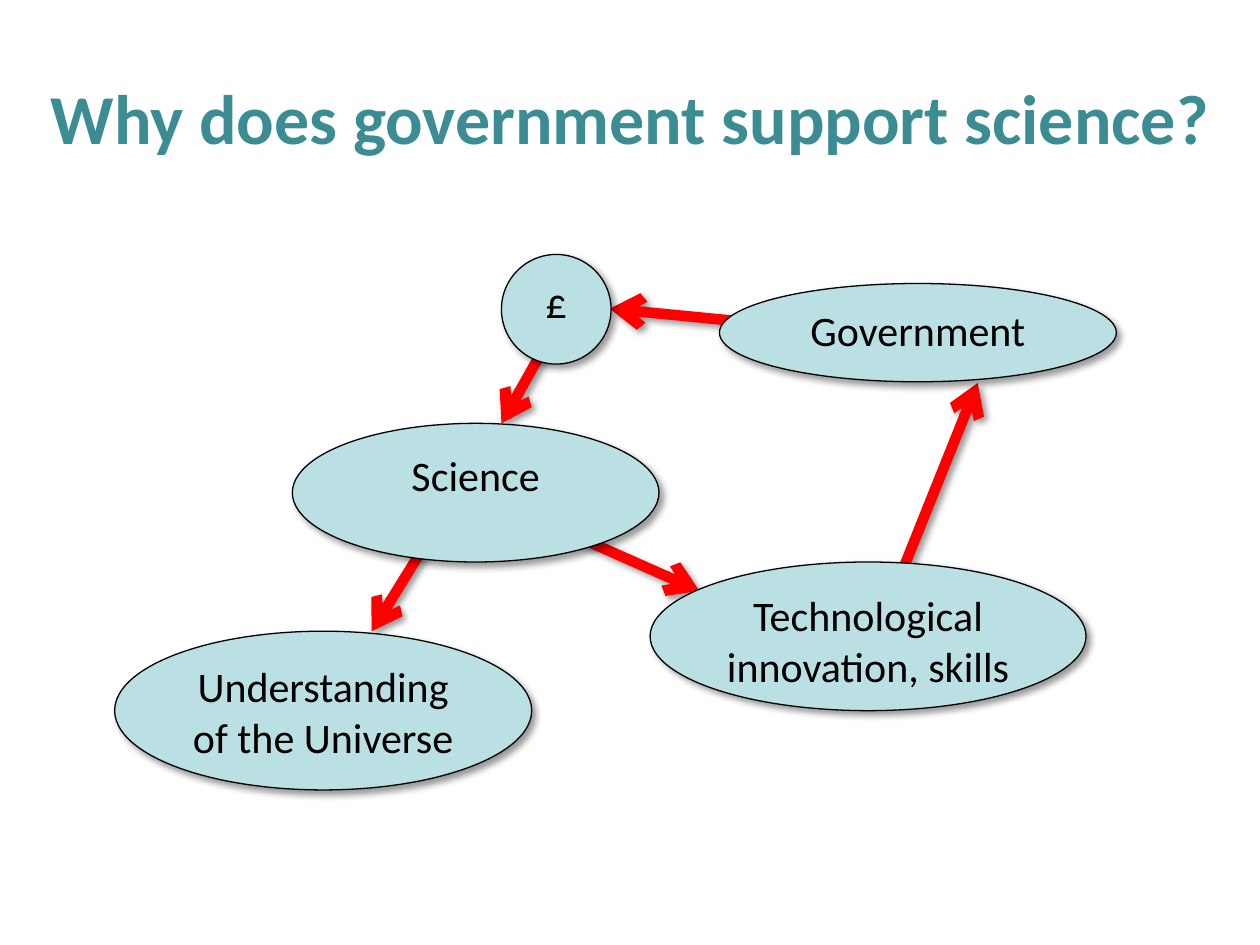
from lxml.etree import SubElement
from pptx import Presentation
from pptx.dml.color import RGBColor
from pptx.enum.shapes import MSO_CONNECTOR, MSO_SHAPE
from pptx.enum.text import MSO_ANCHOR, PP_ALIGN
from pptx.oxml.ns import qn
from pptx.util import Inches, Pt

WIDTH, HEIGHT = Inches(10), Inches(7.5)
TEAL = RGBColor(0x3C, 0x8C, 0x93)
PALE_BLUE = RGBColor(0xBB, 0xE0, 0xE3)
RED = RGBColor(0xFF, 0x00, 0x00)
BLACK = RGBColor(0x00, 0x00, 0x00)

FLOWS = [
    (42.9, 37.47, 39.8, 44.8),
    (35.8, 53.2, 29.5, 66.8),
    (41.3, 54.13, 55.5, 62.53),
    (69.7, 66.8, 77.6, 40.53),
    (68.9, 35.33, 48.4, 32.67),
]
IDEAS = [
    ("Science", 23.2, 44.8, 29.1, 14.67),
    ("Understanding of the Universe", 9.1, 66.8, 33.1, 16.8),
    ("Technological innovation, skills", 51.6, 59.47, 34.6, 15.73),
    ("£", 39.8, 26.93, 8.7, 11.6),
    ("Government", 57.1, 30, 31.5, 10.4),
]


def place(across, down):
    """Turn percentages of the slide's width and height into lengths."""
    return int(WIDTH * across / 100), int(HEIGHT * down / 100)


def add_shadow(element):
    """Give a shape or connector a soft shadow to the lower right."""
    effects = SubElement(element.spPr, qn("a:effectLst"))
    shadow = SubElement(effects, qn("a:outerShdw"), blurRad=str(Pt(4)),
                        dist=str(Pt(3)), dir=str(45 * 60000), rotWithShape="0")
    tint = SubElement(shadow, qn("a:srgbClr"), val=str(BLACK))
    SubElement(tint, qn("a:alpha"), val="40000")


def write(frame, wording, size, color, bold=False):
    """Set centred one-paragraph text with its font."""
    frame.text = wording
    frame.word_wrap = True
    paragraph = frame.paragraphs[0]
    paragraph.alignment = PP_ALIGN.CENTER
    font = paragraph.runs[0].font
    font.name, font.size, font.bold = "Calibri", Pt(size), bold
    font.color.rgb = color


def add_title(slide, wording):
    """Fill the title placeholder across the full slide width."""
    title = slide.shapes.title
    title.left, title.top = place(0, 5.2)
    title.width, title.height = place(100, 14.27)
    title.text_frame.vertical_anchor = MSO_ANCHOR.MIDDLE
    write(title.text_frame, wording, 40, TEAL, bold=True)


def add_flow(slide, x1, y1, x2, y2):
    """Draw a thick red arrow between two points."""
    flow = slide.shapes.add_connector(
        MSO_CONNECTOR.STRAIGHT, *place(x1, y1), *place(x2, y2))
    flow.line.color.rgb = RED
    flow.line.width = Pt(6)
    SubElement(flow.line._get_or_add_ln(), qn("a:tailEnd"), type="arrow")
    add_shadow(flow._element)


def add_idea(slide, wording, left, top, width, height):
    """Draw a labelled ellipse."""
    idea = slide.shapes.add_shape(
        MSO_SHAPE.OVAL, *place(left, top), *place(width, height))
    idea.fill.solid()
    idea.fill.fore_color.rgb = PALE_BLUE
    idea.line.color.rgb = BLACK
    idea.line.width = Pt(0.75)
    add_shadow(idea._element)
    idea.text_frame.vertical_anchor = MSO_ANCHOR.TOP
    write(idea.text_frame, wording, 24, BLACK)


def main():
    """Build the slide and save it."""
    deck = Presentation()
    deck.slide_width, deck.slide_height = WIDTH, HEIGHT
    slide = deck.slides.add_slide(deck.slide_layouts[5])
    add_title(slide, "Why does government support science?")
    for flow in FLOWS:
        add_flow(slide, *flow)
    for idea in IDEAS:
        add_idea(slide, *idea)
    deck.save("out.pptx")


if __name__ == "__main__":
    main()
